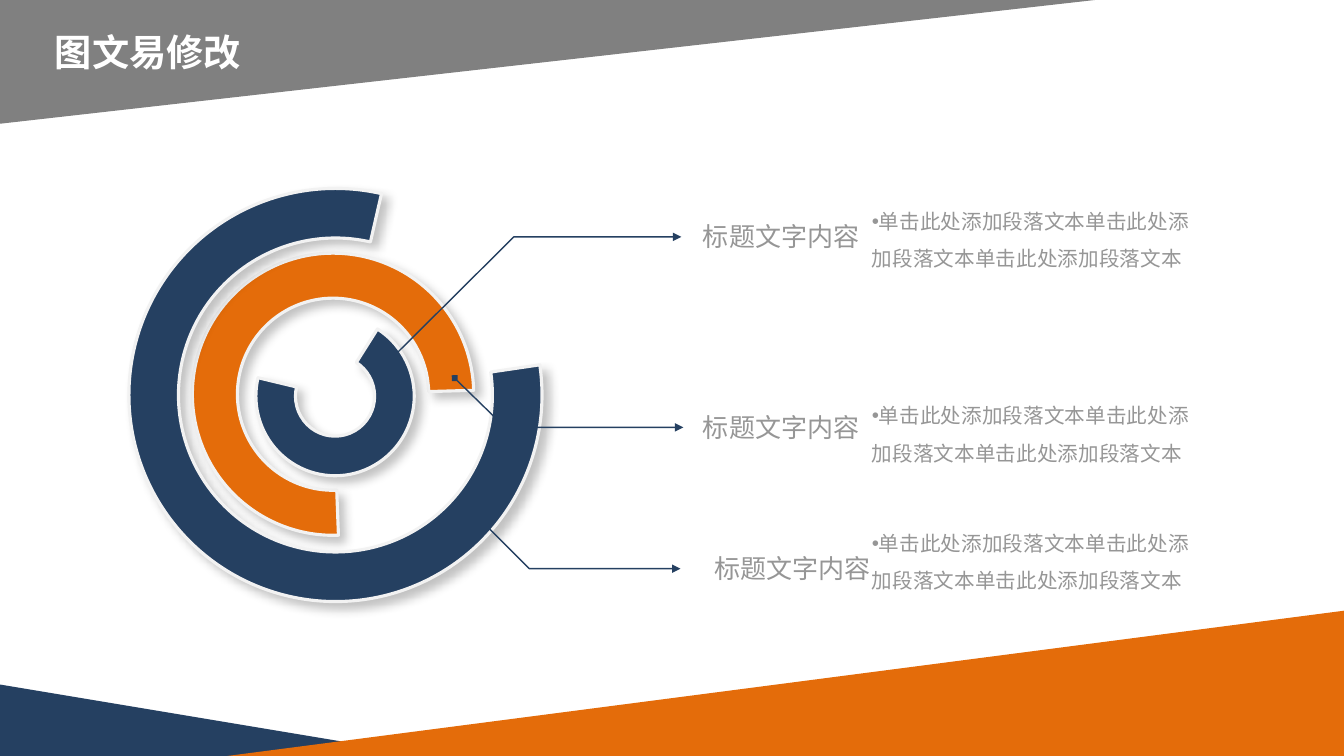
from lxml import etree
from pptx import Presentation, util as u
from pptx.dml.color import RGBColor
from pptx.enum import shapes, text
from pptx.oxml import ns

COLORS = {
    "navy": "254061",
    "orange": "E46C0A",
    "gray": "808080",
    "edge": "F2F2F2",
    "text": "969696",
    "white": "FFFFFF",
    "shadow": "000000",
}
SANS = "Noto Sans CJK SC"
LABEL = "标题文字内容"
BODY = "单击此处添加段落文本" * 3


class Painter:
    def __init__(self, page):
        self.page = page

    def color(self, name):
        return RGBColor.from_string(COLORS[name])

    def preset(self, kind, area, fill):
        shape = self.page.shapes.add_shape(kind, *map(u.Cm, area))
        shape.shadow.inherit = False
        shape.fill.solid()
        shape.fill.fore_color.rgb = self.color(fill)
        shape.line.fill.background()
        return shape

    def triangle(self, area, fill, flip=None):
        shape = self.preset(shapes.MSO_SHAPE.RIGHT_TRIANGLE, area, fill)
        if flip:
            shape.element.spPr.find(ns.qn("a:xfrm")).set(flip, "1")

    def arc(self, area, fill, start, end, thickness):
        shape = self.preset(shapes.MSO_SHAPE.BLOCK_ARC, area, fill)
        shape.adjustments[0] = start * 0.6
        shape.adjustments[1] = end * 0.6
        shape.adjustments[2] = thickness
        shape.line.color.rgb = self.color("edge")
        shape.line.width = u.Pt(2.25)
        effects = shape.element.spPr.find(ns.qn("a:effectLst"))
        shadow = etree.SubElement(
            effects, ns.qn("a:outerShdw"), blurRad=str(u.Pt(7)),
            dist=str(u.Pt(5.9)), dir="2700000", algn="tl", rotWithShape="0")
        tone = etree.SubElement(shadow, ns.qn("a:srgbClr"), val=COLORS["shadow"])
        etree.SubElement(tone, ns.qn("a:alpha"), val="23000")

    def leader(self, points):
        start, *rest = [(u.Cm(x), u.Cm(y)) for x, y in points]
        builder = self.page.shapes.build_freeform(*start)
        builder.add_line_segments(rest, close=False)
        shape = builder.convert_to_shape()
        shape.shadow.inherit = False
        shape.fill.background()
        shape.line.color.rgb = self.color("navy")
        shape.line.width = u.Pt(1)
        outline = shape.element.spPr.find(ns.qn("a:ln"))
        etree.SubElement(outline, ns.qn("a:headEnd"), type="diamond")
        etree.SubElement(outline, ns.qn("a:tailEnd"), type="triangle")

    def label(self, area, content, size, color="text", font=SANS, bold=False):
        box = self.page.shapes.add_textbox(*map(u.Cm, area))
        frame = box.text_frame
        frame.word_wrap = True
        frame.auto_size = text.MSO_AUTO_SIZE.SHAPE_TO_FIT_TEXT
        para = frame.paragraphs[0]
        para.text = content
        para.alignment = text.PP_ALIGN.CENTER
        para.font.size = u.Pt(size)
        para.font.name = font
        para.font.bold = bold
        para.font.color.rgb = self.color(color)
        defaults = para._p.pPr.find(ns.qn("a:defRPr"))
        etree.SubElement(defaults, ns.qn("a:ea"), typeface=SANS)
        return frame

    def title(self, area, content):
        frame = self.label(area, content, 26.6, "white", bold=True)
        frame.margin_left = frame.margin_right = 0
        frame.margin_top = frame.margin_bottom = 0

    def bullet(self, area, content):
        para = self.label(area, content, 14.7).paragraphs[0]
        para.alignment = text.PP_ALIGN.LEFT
        para.line_spacing = 1.5
        para.space_before = u.Pt(13.3)
        settings = para._p.pPr
        settings.set("marL", "0")
        settings.set("indent", "0")
        defaults = settings.find(ns.qn("a:defRPr"))
        defaults.addprevious(etree.Element(ns.qn("a:buFont"), typeface="Arial"))
        defaults.addprevious(etree.Element(ns.qn("a:buChar"), char="•"))


def main():
    deck = Presentation()
    deck.slide_width, deck.slide_height = u.Cm(33.87), u.Cm(19.05)
    painter = Painter(deck.slides.add_slide(deck.slide_layouts[6]))

    painter.triangle((0, 17.25, 10.8, 1.8), "navy")
    painter.triangle((5.73, 15.39, 28.14, 3.66), "orange", "flipH")
    painter.triangle((0, 0, 27.61, 3.12), "gray", "flipV")

    painter.arc((4.85, 6.38, 7.09, 7.11), "orange", 87.81, 358.41, 0.16)
    painter.arc((3.25, 4.75, 10.41, 10.41), "navy", 351.6, 282.88, 0.12)
    painter.arc((6.45, 7.98, 3.99, 4.01), "navy", 302.25, 193.47, 0.25)

    items = [
        ((9.86, 9.04), (12.95, 5.97), 17.17, 5.03, 4.83),
        ((11.46, 9.53), (12.73, 10.77), 17.22, 5.03, 9.73),
        ((12.01, 13), (13.34, 14.33), 17.15, 5.59, 12.95),
    ]
    for start, bend, tip, label_width, body_top in items:
        level = bend[1]
        painter.leader([start, bend, (tip, level)])
        painter.label((17.17, level - 0.53, label_width, 1.07), LABEL, 18.6,
                      font="Arial Narrow")
        painter.bullet((21.72, body_top, 8.86, 2.13), BODY)

    painter.title((0, 0.74, 7.47, 1.14), "图文易修改")
    deck.save("out.pptx")


if __name__ == "__main__":
    main()
